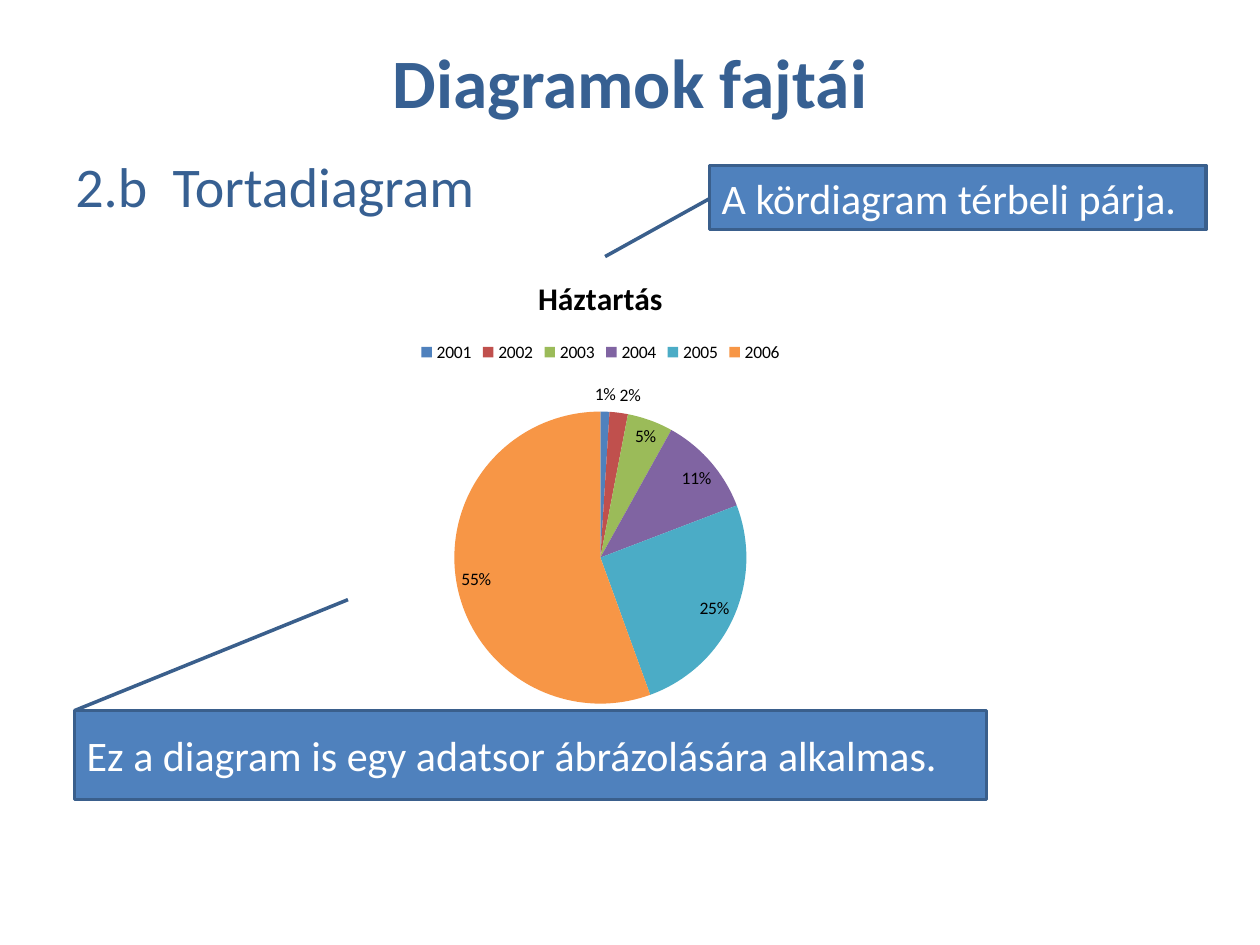
from dataclasses import dataclass

from pptx import Presentation
from pptx import util as u
from pptx.chart import data
from pptx.dml.color import RGBColor
from pptx.enum import chart as charts, shapes, text


@dataclass(frozen=True)
class Theme:
    font: str = "Calibri"
    heading: str = "376092"
    box: str = "4F81BD"
    border: str = "3A5F8C"
    light: str = "FFFFFF"
    dark: str = "000000"
    slices: tuple = ("4F81BD", "C0504D", "9BBB59", "8064A2", "4BACC6", "F79646")
    title_size: float = 39.6
    subtitle_size: float = 32
    callout_size: float = 24
    chart_title_size: float = 18
    chart_size: float = 10


THEME = Theme()
WIDTH, HEIGHT = u.Inches(10), u.Inches(7.5)


def area(left, top, width, height):
    return (int(left * WIDTH), int(top * HEIGHT),
            int(width * WIDTH), int(height * HEIGHT))


def style(font, size, color, bold=False):
    font.name = THEME.font
    font.size = u.Pt(size)
    font.bold = bold
    font.color.rgb = RGBColor.from_string(color)


def write(frame, words, size, color, align, anchor, bold=False):
    frame.word_wrap = True
    frame.vertical_anchor = anchor
    line = frame.paragraphs[0]
    line.text = words
    line.alignment = align
    style(line.font, size, color, bold)


def add_title(slide, words):
    title = slide.shapes.title
    title.left, title.top, title.width, title.height = area(0.05, 0.04, 0.9, 0.092)
    write(title.text_frame, words, THEME.title_size, THEME.heading,
          text.PP_ALIGN.CENTER, text.MSO_ANCHOR.MIDDLE, bold=True)


def add_subtitle(slide, words):
    subtitle = slide.shapes.add_textbox(*area(0.05, 0.154, 0.9, 0.74))
    write(subtitle.text_frame, words, THEME.subtitle_size, THEME.heading,
          text.PP_ALIGN.LEFT, text.MSO_ANCHOR.TOP)


def add_callout(slide, words, place, pointer):
    callout = slide.shapes.add_shape(shapes.MSO_SHAPE.LINE_CALLOUT_1, *area(*place))
    for index, share in enumerate(pointer):
        callout.adjustments[index] = share
    callout.shadow.inherit = False
    callout.fill.solid()
    callout.fill.fore_color.rgb = RGBColor.from_string(THEME.box)
    callout.line.color.rgb = RGBColor.from_string(THEME.border)
    callout.line.width = u.Pt(2)
    write(callout.text_frame, words, THEME.callout_size, THEME.light,
          text.PP_ALIGN.LEFT, text.MSO_ANCHOR.MIDDLE)


def add_pie(slide, name, shares, place):
    household = data.CategoryChartData()
    household.categories = list(shares)
    household.add_series(name, list(shares.values()))
    pie = slide.shapes.add_chart(charts.XL_CHART_TYPE.PIE, *area(*place), household).chart
    style(pie.font, THEME.chart_size, THEME.dark)

    pie.has_title = True
    heading = pie.chart_title.text_frame.paragraphs[0]
    heading.text = name
    style(heading.font, THEME.chart_title_size, THEME.dark, bold=True)

    pie.has_legend = True
    pie.legend.position = charts.XL_LEGEND_POSITION.TOP
    pie.legend.include_in_layout = False

    plot = pie.plots[0]
    plot.vary_by_categories = True
    for index, color in enumerate(THEME.slices):
        fill = plot.series[0].points[index].format.fill
        fill.solid()
        fill.fore_color.rgb = RGBColor.from_string(color)

    plot.has_data_labels = True
    labels = plot.data_labels
    labels.show_value = True
    labels.number_format = '0"%"'
    labels.number_format_is_linked = False
    labels.position = charts.XL_LABEL_POSITION.BEST_FIT
    style(labels.font, THEME.chart_size, THEME.dark)


def main():
    deck = Presentation()
    deck.slide_width, deck.slide_height = WIDTH, HEIGHT
    slide = deck.slides.add_slide(deck.slide_layouts[5])

    add_title(slide, "Diagramok fajtái")
    add_subtitle(slide, "2.b  Tortadiagram")
    add_callout(slide, "A kördiagram térbeli párja.",
                (0.563, 0.175, 0.394, 0.068), (0.52, 0, 1.42, -0.21))
    add_pie(slide, "Háztartás",
            {"2001": 1, "2002": 2, "2003": 5, "2004": 11, "2005": 25, "2006": 55},
            (0.138, 0.27, 0.677, 0.493))
    add_callout(slide, "Ez a diagram is egy adatsor ábrázolására alkalmas.",
                (0.059, 0.752, 0.724, 0.094), (0, 0, -1.25, 0.3))

    deck.save("out.pptx")


if __name__ == "__main__":
    main()
